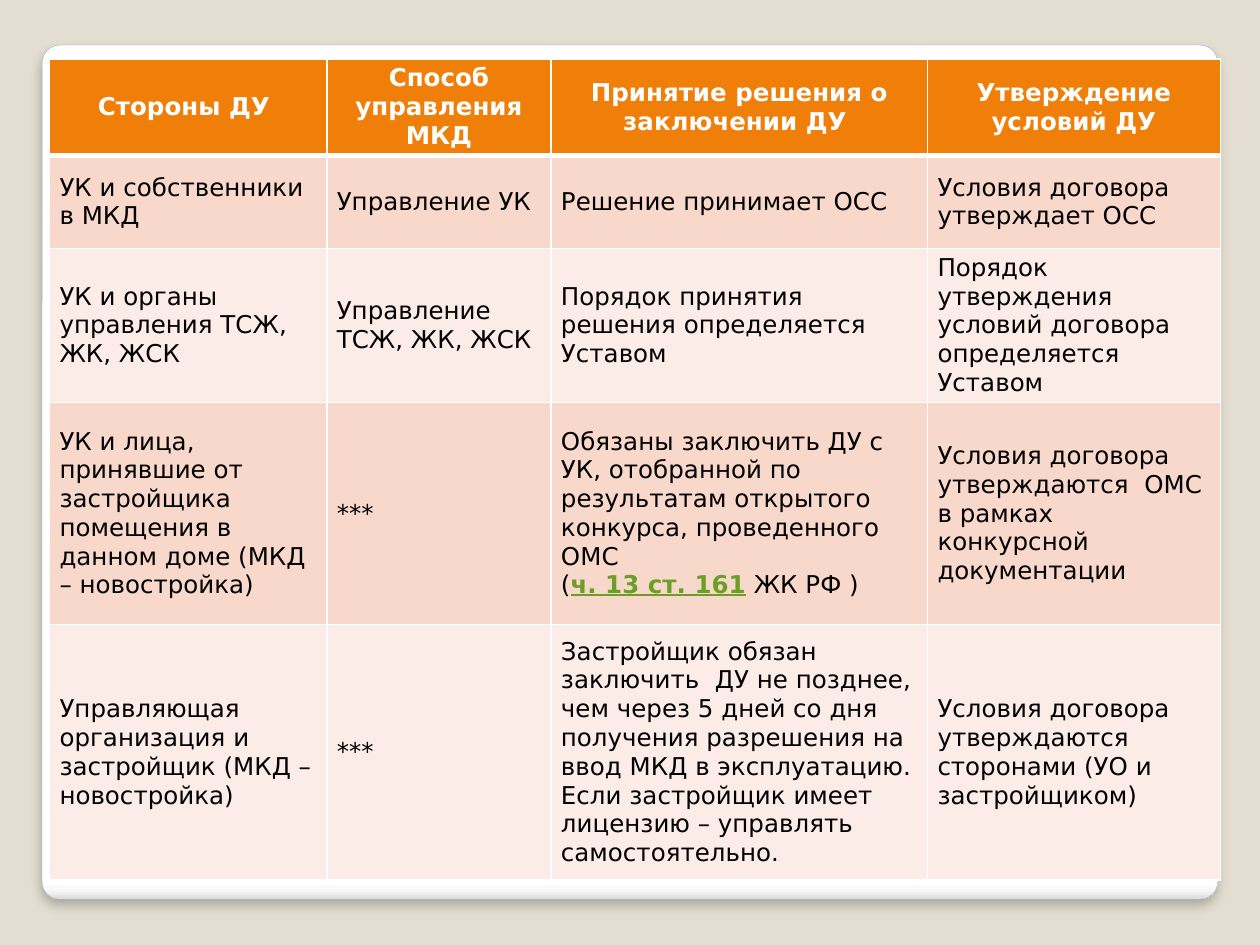
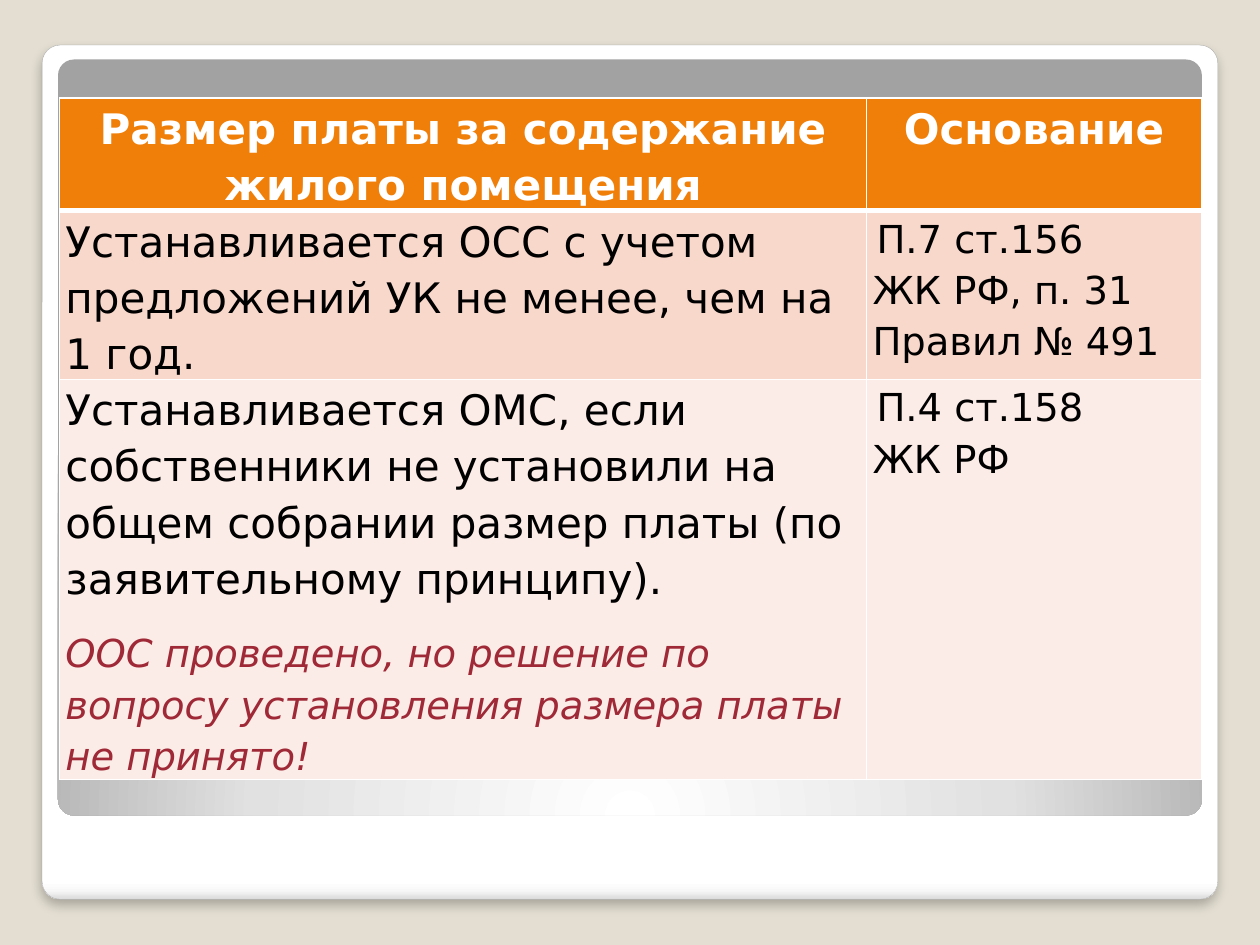
import pptx
import pptx.util
import pptx.dml.color
import pptx.enum.shapes
import pptx.enum.text
from lxml import etree
from pptx.util import Cm, Pt

COLORS = {
    "background": "E3DED1", "white": "FFFFFF", "black": "000000",
    "edge": "A4A4A4", "header": "F07F09", "odd": "F9D8CC", "even": "FCECE7",
    "reference": "6B9F25", "warning": "9F2936",
}
FONT = "DejaVu Sans"
A = "http://schemas.openxmlformats.org/drawingml/2006/main"


def rgb(name):
    return pptx.dml.color.RGBColor.from_string(COLORS[name])


class Deck:
    def __init__(self):
        self.prs = pptx.Presentation()
        self.prs.slide_width, self.prs.slide_height = Cm(25.4), Cm(19.05)
        self.s = None

    def add_slide(self):
        self.s = self.prs.slides.add_slide(self.prs.slide_layouts[6])

    def frame(self):
        """Background and two panels, kept on the master for every slide."""
        fill = self.prs.slide_master.background.fill
        fill.solid()
        fill.fore_color.rgb = rgb("background")

        card = self.panel(0.85, 0.91, 23.7, 17.22,
                          [(0, "FFFFFF"), (98, "FFFFFF"), (99, "F7F7F7"), (100, "DADADA")],
                          '<a:lin ang="5400000" scaled="0"/>')
        card.line.color.rgb = rgb("edge")
        card.line.width = Pt(0.16)
        effects = card.element.spPr.find(f"{{{A}}}effectLst")
        effects.append(etree.fromstring(
            f'<a:outerShdw xmlns:a="{A}" blurRad="{Pt(6)}" dist="{Pt(4)}" dir="5400000"'
            ' algn="t" rotWithShape="0"><a:srgbClr val="000000"><a:alpha val="25000"/>'
            '</a:srgbClr></a:outerShdw>'))

        inner = self.panel(1.17, 1.2, 23.06, 15.24,
                           [(0, "FFFFFF"), (55, "E1E1E1"), (100, "A2A2A2")],
                           '<a:path path="circle"><a:fillToRect l="50000" t="175000"'
                           ' r="50000" b="-75000"/></a:path>')
        inner.line.fill.background()

        for number, sp in enumerate((card, inner), 101):
            sp.element.nvSpPr.cNvPr.id = number
            self.prs.slide_master.shapes.element.append(sp.element)

    def panel(self, x, y, w, h, stops, direction):
        sp = self.s.shapes.add_shape(pptx.enum.shapes.MSO_SHAPE.ROUNDED_RECTANGLE,
                                     Cm(x), Cm(y), Cm(w), Cm(h))
        sp.adjustments[0] = 0.021
        sp.shadow.inherit = False
        marks = "".join(f'<a:gs pos="{pos * 1000}"><a:srgbClr val="{color}"/></a:gs>'
                        for pos, color in stops)
        sp.element.spPr.insert(2, etree.fromstring(
            f'<a:gradFill xmlns:a="{A}" rotWithShape="1"><a:gsLst>{marks}</a:gsLst>'
            f'{direction}</a:gradFill>'))
        return sp

    def table(self, x, y, cols, heights, rows, size, margins, anchor, spaced=False):
        tbl = self.s.shapes.add_table(len(rows), len(cols), Cm(x), Cm(y),
                                      Cm(sum(cols)), Cm(sum(heights))).table
        for col, width in zip(tbl.columns, cols):
            col.width = Cm(width)
        for row, height in zip(tbl.rows, heights):
            row.height = Cm(height)
        for i, row in enumerate(rows):
            for j, content in enumerate(row):
                cell = tbl.cell(i, j)
                cell.margin_left = cell.margin_right = Cm(margins[0])
                cell.margin_top = cell.margin_bottom = Cm(margins[1])
                cell.vertical_anchor = anchor
                cell.fill.solid()
                cell.fill.fore_color.rgb = rgb(
                    "header" if i == 0 else "odd" if i % 2 else "even")
                self.borders(cell, i)
                self.text(cell.text_frame, content, size, i == 0, spaced)
        return tbl

    def borders(self, cell, row):
        widths = {"L": 1, "R": 1, "T": 3 if row == 1 else 1, "B": 3 if row == 0 else 1}
        tc_pr = cell._tc.get_or_add_tcPr()
        for k, (side, width) in enumerate(widths.items()):
            tc_pr.insert(k, etree.fromstring(
                f'<a:ln{side} xmlns:a="{A}" w="{Pt(width)}"><a:solidFill>'
                f'<a:srgbClr val="{COLORS["white"]}"/></a:solidFill></a:ln{side}>'))

    def text(self, tf, content, size, header, spaced):
        """Content is a string or a list of paragraphs, each a list of (text, style)."""
        paragraphs = [[(content, {})]] if isinstance(content, str) else content
        for k, runs in enumerate(paragraphs):
            p = tf.add_paragraph() if k else tf.paragraphs[0]
            p.alignment = (pptx.enum.text.PP_ALIGN.CENTER if header
                           else pptx.enum.text.PP_ALIGN.LEFT)
            if spaced:
                p.line_spacing = 1.15
                p.space_before = p.space_after = Pt(6)
            for text, style in runs:
                if text == "\n":
                    p.add_line_break()
                    continue
                r = p.add_run()
                r.text = text
                r.font.name = FONT
                r.font.size = Pt(style.get("size", size))
                r.font.bold = style.get("bold", header)
                r.font.italic = style.get("italic", False)
                r.font.underline = style.get("underline", False)
                r.font.color.rgb = rgb(style.get("color", "white" if header else "black"))


def main():
    deck = Deck()
    anchors = pptx.enum.text.MSO_ANCHOR

    # Slide 1: who concludes the management contract
    deck.add_slide()
    deck.frame()
    reference = {"color": "reference", "bold": True, "underline": True}
    contracts = [
        ["Стороны ДУ ", "Способ управления МКД", "Принятие решения о заключении ДУ ",
         "Утверждение условий ДУ"],
        ["УК и собственники в МКД", "Управление УК", "Решение принимает ОСС",
         "Условия договора утверждает ОСС"],
        ["УК и органы управления ТСЖ, ЖК, ЖСК", "Управление ТСЖ, ЖК, ЖСК",
         "Порядок принятия решения определяется Уставом",
         "Порядок утверждения условий договора определяется Уставом"],
        ["УК и лица, принявшие от застройщика помещения в данном доме (МКД – новостройка)",
         "***",
         [[("Обязаны заключить ДУ с УК, отобранной по результатам открытого конкурса, "
            "проведенного ОМС", {})],
          [("(", {}), ("ч. 13 ст. 161", reference), (" ЖК РФ )", {})]],
         "Условия договора утверждаются  ОМС в рамках конкурсной документации"],
        ["Управляющая организация и застройщик (МКД – новостройка)", "***",
         "Застройщик обязан заключить  ДУ не позднее, чем через 5 дней со дня получения "
         "разрешения на ввод МКД в эксплуатацию. Если застройщик имеет лицензию – "
         "управлять самостоятельно.",
         "Условия договора утверждаются сторонами (УО и застройщиком)"],
    ]
    deck.table(1, 1.19, [5.59, 4.52, 7.59, 5.9], [1.93, 1.88, 3.1, 4.48, 5.15],
               contracts, 14, (0.2, 0.1), anchors.MIDDLE)

    # Slide 2: how the housing fee is set
    deck.add_slide()
    law = {"size": 22}
    warning = {"size": 22, "color": "warning", "italic": True}
    fees = [
        ["Размер платы за содержание жилого помещения", "Основание"],
        ["Устанавливается ОСС с учетом предложений УК не менее, чем на 1 год.",
         [[("П.7 ст.156", law), ("\n", {}), ("ЖК РФ, п. 31 Правил № 491", law)]]],
        [[[("Устанавливается ОМС, если собственники не установили на общем собрании "
            "размер платы (по заявительному принципу).", {})],
          [("ООС проведено, но решение по вопросу установления размера платы "
            "не принято!", warning)]],
         [[("П.4 ст.158", law), ("\n", {}), ("ЖК РФ", law)]]],
    ]
    tbl = deck.table(1.2, 1.98, [16.27, 6.75], [2.2, 3.3, 8], fees, 24,
                     (0.12, 0), anchors.TOP, spaced=True)
    for i in (1, 2):
        p_pr = tbl.cell(i, 1).text_frame.paragraphs[0]._p.get_or_add_pPr()
        p_pr.set("marL", "0")
        p_pr.set("indent", str(Cm(0.08)))

    deck.prs.save("out.pptx")


if __name__ == "__main__":
    main()
